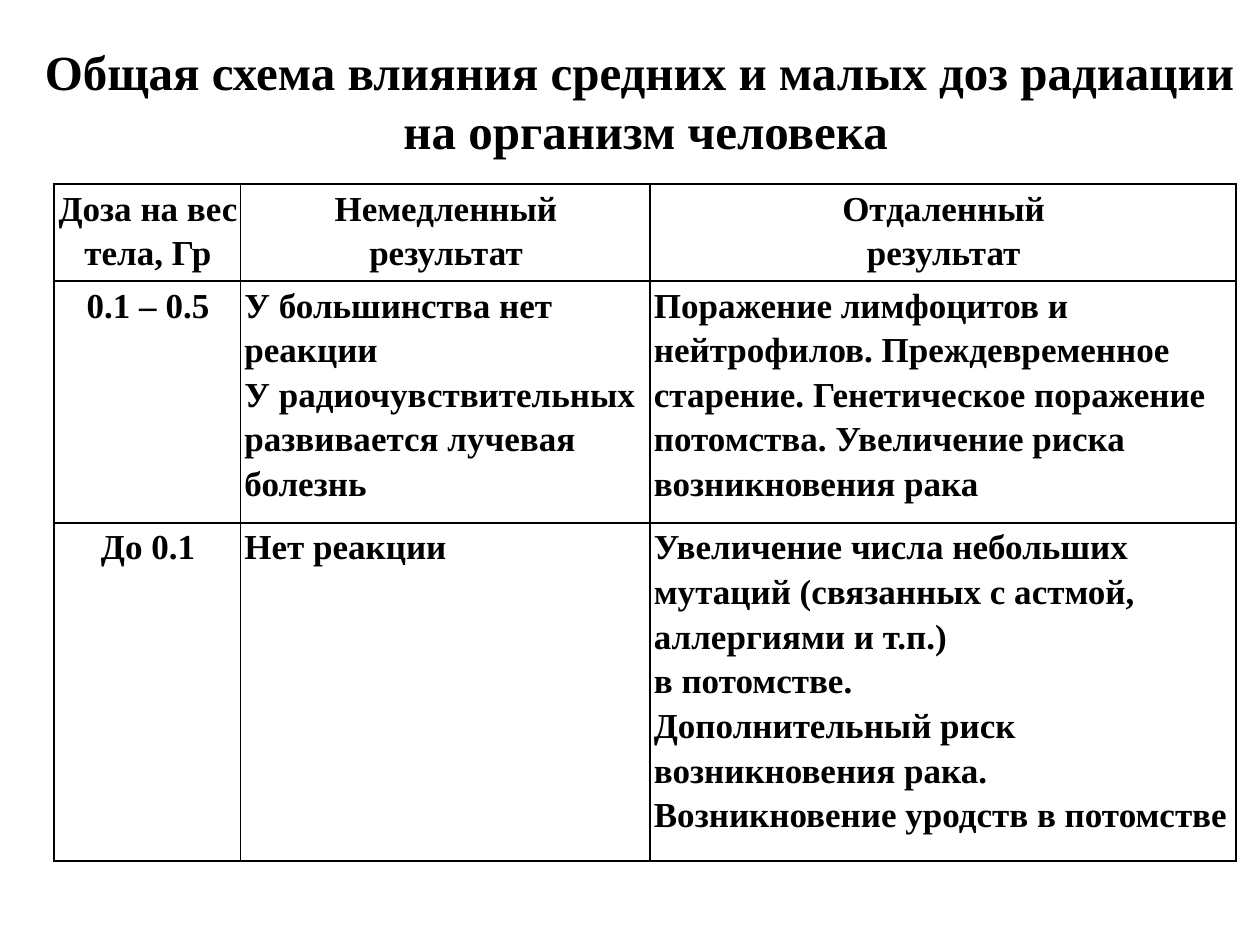
import dataclasses

import pptx
import pptx.dml.color
import pptx.enum.text
import pptx.oxml
import pptx.oxml.ns
import pptx.util

Inches = pptx.util.Inches
Pt = pptx.util.Pt
Align = pptx.enum.text.PP_ALIGN
Anchor = pptx.enum.text.MSO_ANCHOR


@dataclasses.dataclass(frozen=True)
class Theme:
    """Colours, font and sizes of the slide."""
    font: str = "Times New Roman"
    ink: str = "000000"
    paper: str = "FFFFFF"
    title_size: int = 28
    table_size: int = 20
    border: int = 1


THEME = Theme()
TITLE = ["Общая схема влияния средних и малых доз радиации", " на организм человека"]
COLUMN_WIDTHS = [1.48, 3.25, 4.65]
ROW_HEIGHTS = [0.77, 1.92, 2.68]
DOSE_ROWS = [
    [["Доза на вес тела, Гр"], ["Немедленный", "результат"], ["Отдаленный", "результат"]],
    [
        ["0.1 – 0.5"],
        ["У большинства нет реакции", "У радиочувствительных развивается лучевая болезнь"],
        ["Поражение лимфоцитов и нейтрофилов. Преждевременное старение. "
         "Генетическое поражение потомства. Увеличение риска возникновения рака"],
    ],
    [
        ["До 0.1"],
        ["Нет реакции"],
        ["Увеличение числа небольших мутаций (связанных с астмой, аллергиями и т.п.)",
         "в потомстве.",
         "Дополнительный риск возникновения рака. Возникновение уродств в потомстве"],
    ],
]


def write_text(frame, lines, *, size, align=Align.LEFT, spacing=None):
    """Write each line as a bold paragraph in the given frame."""
    for index, line in enumerate(lines):
        paragraph = frame.paragraphs[0] if index == 0 else frame.add_paragraph()
        paragraph.alignment = align
        paragraph.line_spacing = spacing
        run = paragraph.add_run()
        run.text = line
        run.font.name = THEME.font
        run.font.size = Pt(size)
        run.font.bold = True
        run.font.color.rgb = pptx.dml.color.RGBColor.from_string(THEME.ink)


def add_borders(cell):
    """Draw a thin solid line on all four sides of a cell."""
    properties = cell._tc.get_or_add_tcPr()
    for index, side in enumerate(("lnL", "lnR", "lnT", "lnB")):
        line = pptx.oxml.parse_xml(
            f'<a:{side} {pptx.oxml.ns.nsdecls("a")} w="{Pt(THEME.border)}">'
            f'<a:solidFill><a:srgbClr val="{THEME.ink}"/></a:solidFill></a:{side}>'
        )
        properties.insert(index, line)


def add_title(slide, left, top, width, height):
    """Place the centred two-line title in its box."""
    title = slide.shapes.add_textbox(left, top, width, height)
    frame = title.text_frame
    frame.word_wrap = False
    frame.auto_size = pptx.enum.text.MSO_AUTO_SIZE.SHAPE_TO_FIT_TEXT
    frame.vertical_anchor = Anchor.MIDDLE
    write_text(frame, TITLE, size=THEME.title_size, align=Align.CENTER)


def add_dose_table(slide, left, top, width, height):
    """Place the table of doses and their effects in its box."""
    table = slide.shapes.add_table(
        len(ROW_HEIGHTS), len(COLUMN_WIDTHS), left, top, width, height
    ).table
    table.horz_banding = False
    for column, share in zip(table.columns, COLUMN_WIDTHS):
        column.width = int(width * share / sum(COLUMN_WIDTHS))
    for row, share in zip(table.rows, ROW_HEIGHTS):
        row.height = int(height * share / sum(ROW_HEIGHTS))
    for row_index, row in enumerate(DOSE_ROWS):
        for column_index, lines in enumerate(row):
            cell = table.cell(row_index, column_index)
            cell.fill.background()
            cell.margin_left, cell.margin_right = Inches(0.03), Inches(0.02)
            cell.margin_top = cell.margin_bottom = 0
            cell.vertical_anchor = Anchor.TOP
            add_borders(cell)
            centred = row_index == 0 or column_index == 0
            write_text(cell.text_frame, lines, size=THEME.table_size, spacing=1.15,
                       align=Align.CENTER if centred else Align.LEFT)


def main():
    """Build the slide and save it."""
    deck = pptx.Presentation()
    deck.slide_width, deck.slide_height = Inches(10), Inches(7.5)
    slide = deck.slides.add_slide(deck.slide_layouts[6])
    slide.background.fill.solid()
    slide.background.fill.fore_color.rgb = pptx.dml.color.RGBColor.from_string(THEME.paper)
    add_title(slide, Inches(0.2), Inches(0.28), Inches(9.75), Inches(1.04))
    add_dose_table(slide, Inches(0.43), Inches(1.46), Inches(9.38), Inches(5.37))
    deck.save("out.pptx")


if __name__ == "__main__":
    main()
